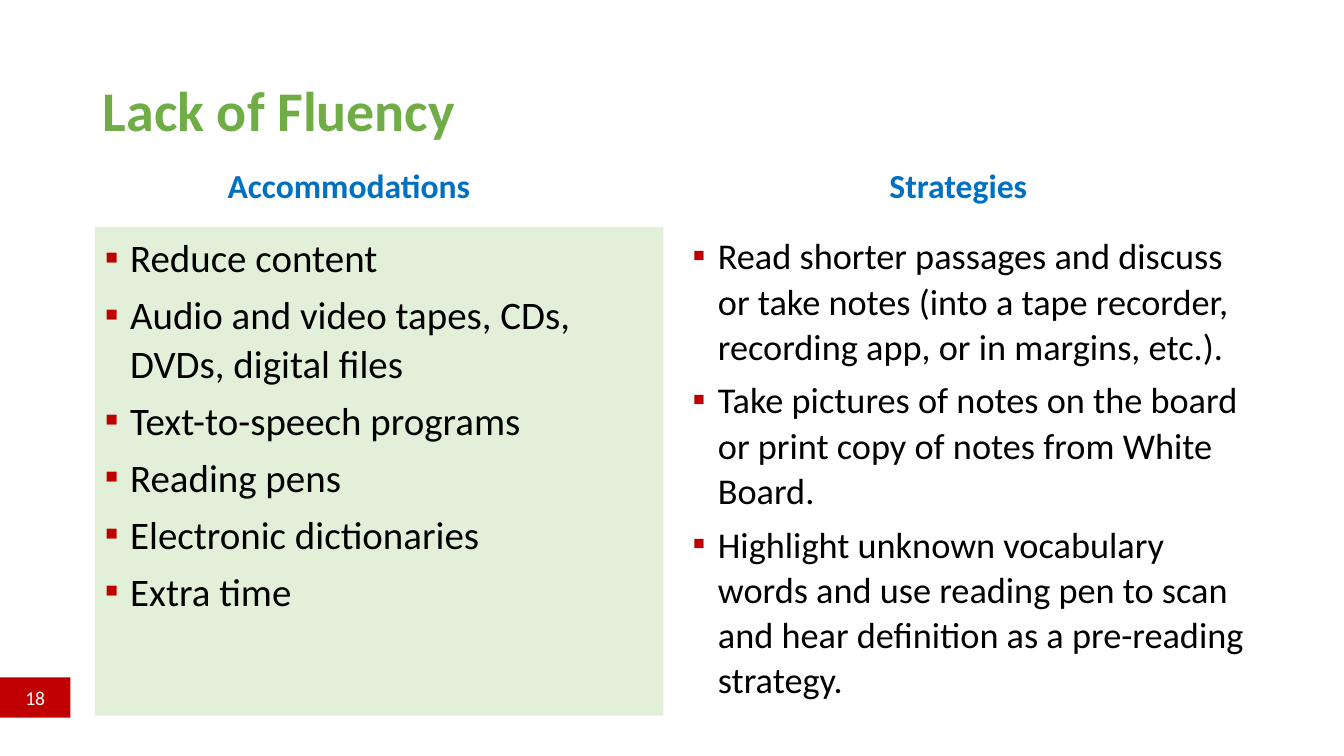
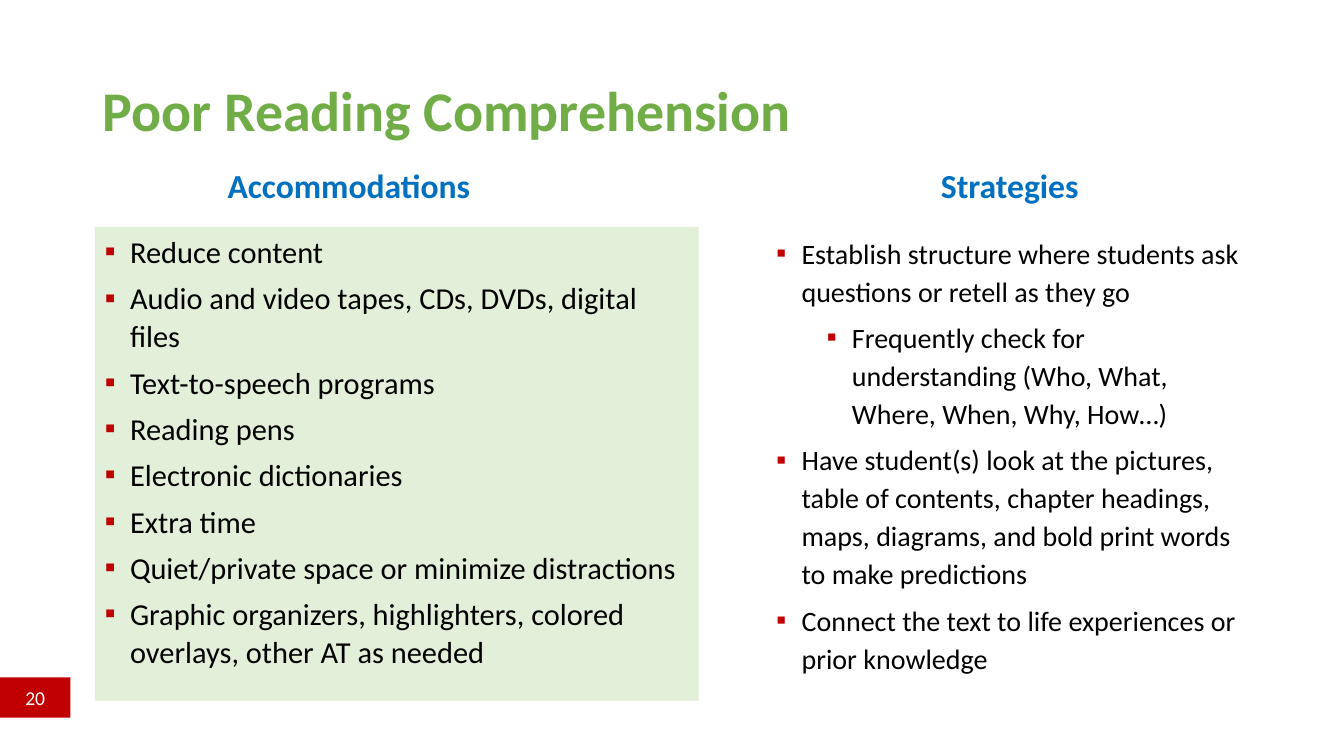
"""Builds two comparison slides of accommodations and strategies for readers."""
import dataclasses

import lxml.etree
import pptx
import pptx.dml.color
import pptx.enum.shapes
import pptx.enum.text
import pptx.oxml.ns
import pptx.util

ANCHOR = pptx.enum.text.MSO_ANCHOR
ALIGN = pptx.enum.text.PP_ALIGN


@dataclasses.dataclass(frozen=True)
class Theme:
    font: str = "Calibri"
    title_color: str = "70AD47"
    heading_color: str = "0070C0"
    text_color: str = "000000"
    panel_color: str = "E2F0D9"
    accent_color: str = "C00000"
    number_color: str = "FFFFFF"
    title_size: float = 40
    heading_size: float = 24
    number_size: float = 14
    bullet: str = "▪"


class ComparisonDeck:
    EMU_PER_PX = 9144
    COMPARISON_LAYOUT = 4
    INDENT = 25
    LEVEL_STEP = 50
    COLUMN_TOP = 225

    def __init__(self, theme):
        self.theme = theme
        self.presentation = pptx.Presentation()
        self.presentation.slide_width = self.px(1333)
        self.presentation.slide_height = self.px(750)
        self.slide = None

    def px(self, length):
        return pptx.util.Emu(length * self.EMU_PER_PX)

    def color(self, value):
        return pptx.dml.color.RGBColor.from_string(value)

    def fill(self, shape, color):
        shape.fill.solid()
        shape.fill.fore_color.rgb = self.color(color)

    def placeholder(self, index, left, top, width, height, anchor):
        shape = self.slide.placeholders[index]
        shape.left, shape.top = self.px(left), self.px(top)
        shape.width, shape.height = self.px(width), self.px(height)
        shape.text_frame.auto_size = pptx.enum.text.MSO_AUTO_SIZE.NONE
        shape.text_frame.word_wrap = True
        shape.text_frame.vertical_anchor = anchor
        return shape

    def format(self, paragraph, size, color, bold=False, align=ALIGN.LEFT,
               line=1.0, before=0, after=0):
        paragraph.alignment = align
        paragraph.line_spacing = line
        paragraph.space_before = pptx.util.Pt(before)
        paragraph.space_after = pptx.util.Pt(after)
        for run in paragraph.runs:
            run.font.name = self.theme.font
            run.font.size = pptx.util.Pt(size)
            run.font.bold = bold
            run.font.color.rgb = self.color(color)

    def add_bullet(self, paragraph):
        qn = pptx.oxml.ns.qn
        properties = paragraph._p.get_or_add_pPr()
        left = self.INDENT + self.LEVEL_STEP * paragraph.level
        properties.set("marL", str(self.px(left)))
        properties.set("indent", str(self.px(-self.INDENT)))
        color = lxml.etree.SubElement(properties, qn("a:buClr"))
        lxml.etree.SubElement(color, qn("a:srgbClr"), val=self.theme.accent_color)
        lxml.etree.SubElement(properties, qn("a:buFont"), typeface=self.theme.font)
        lxml.etree.SubElement(properties, qn("a:buChar"), char=self.theme.bullet)

    def add_slide(self, title, number):
        layout = self.presentation.slide_layouts[self.COMPARISON_LAYOUT]
        self.slide = self.presentation.slides.add_slide(layout)
        shape = self.placeholder(0, 92, 40, 1150, 145, ANCHOR.MIDDLE)
        shape.text_frame.text = title
        self.format(shape.text_frame.paragraphs[0], self.theme.title_size,
                    self.theme.title_color, bold=True, line=0.9)
        self.add_number(number)

    def add_number(self, number):
        shape = self.slide.shapes.add_shape(
            pptx.enum.shapes.MSO_SHAPE.RECTANGLE,
            self.px(0), self.px(672), self.px(70), self.px(40))
        shape.shadow.inherit = False
        shape.line.fill.background()
        self.fill(shape, self.theme.accent_color)
        shape.text_frame.vertical_anchor = ANCHOR.MIDDLE
        shape.text_frame.text = str(number)
        self.format(shape.text_frame.paragraphs[0], self.theme.number_size,
                    self.theme.number_color, align=ALIGN.CENTER, after=6)

    def add_heading(self, index, text, left, width):
        shape = self.placeholder(index, left, 148, width, 61, ANCHOR.BOTTOM)
        shape.text_frame.text = text
        self.format(shape.text_frame.paragraphs[0], self.theme.heading_size,
                    self.theme.heading_color, bold=True, align=ALIGN.CENTER,
                    line=0.9, before=10)

    def add_list(self, index, items, left, width, height, size, line=1.04, panel=False):
        shape = self.placeholder(index, left, self.COLUMN_TOP, width, height, ANCHOR.TOP)
        if panel:
            self.fill(shape, self.theme.panel_color)
        shape.text_frame.text = "\n".join(text for level, text in items)
        for paragraph, (level, text) in zip(shape.text_frame.paragraphs, items):
            paragraph.level = level
            self.format(paragraph, size, self.theme.text_color, line=line, before=6)
            self.add_bullet(paragraph)

    def add_accommodations(self, items, width, height, size):
        self.add_heading(1, "Accommodations", 94, 504)
        self.add_list(2, items, 94, width, height, size, panel=True)

    def add_strategies(self, items, heading_left, left, width, height, size, line):
        self.add_heading(3, "Strategies", heading_left, 567)
        self.add_list(4, items, left, width, height, size, line)


COMMON_ACCOMMODATIONS = [
    (0, "Reduce content"),
    (0, "Audio and video tapes, CDs, DVDs, digital files"),
    (0, "Text-to-speech programs"),
    (0, "Reading pens"),
    (0, "Electronic dictionaries"),
    (0, "Extra time"),
]
COMPREHENSION_ACCOMMODATIONS = COMMON_ACCOMMODATIONS + [
    (0, "Quiet/private space or minimize distractions"),
    (0, "Graphic organizers, highlighters, colored overlays, other AT as needed"),
]
FLUENCY_STRATEGIES = [
    (0, "Read shorter passages and discuss or take notes (into a tape recorder, "
        "recording app, or in margins, etc.)."),
    (0, "Take pictures of notes on the board or print copy of notes from White Board."),
    (0, "Highlight unknown vocabulary words and use reading pen to scan and hear "
        "definition as a pre-reading strategy."),
]
COMPREHENSION_STRATEGIES = [
    (0, "Establish structure where students ask questions or retell as they go"),
    (1, "Frequently check for understanding (Who, What, Where, When, Why, How…)"),
    (0, "Have student(s) look at the pictures, table of contents, chapter headings, "
        "maps, diagrams, and bold print words to make predictions"),
    (0, "Connect the text to life experiences or prior knowledge"),
]


def main():
    deck = ComparisonDeck(Theme())

    deck.add_slide("Lack of Fluency", 18)
    deck.add_accommodations(COMMON_ACCOMMODATIONS, width=564, height=485, size=27.8)
    deck.add_strategies(FLUENCY_STRATEGIES, heading_left=667, left=677,
                        width=567, height=505, size=25.9, line=1.04)

    deck.add_slide("Poor Reading Comprehension", 20)
    deck.add_accommodations(COMPREHENSION_ACCOMMODATIONS, width=599, height=470, size=21.7)
    deck.add_strategies(COMPREHENSION_STRATEGIES, heading_left=718, left=760,
                        width=485, height=485, size=20, line=1.13)

    deck.presentation.save("out.pptx")


if __name__ == "__main__":
    main()
